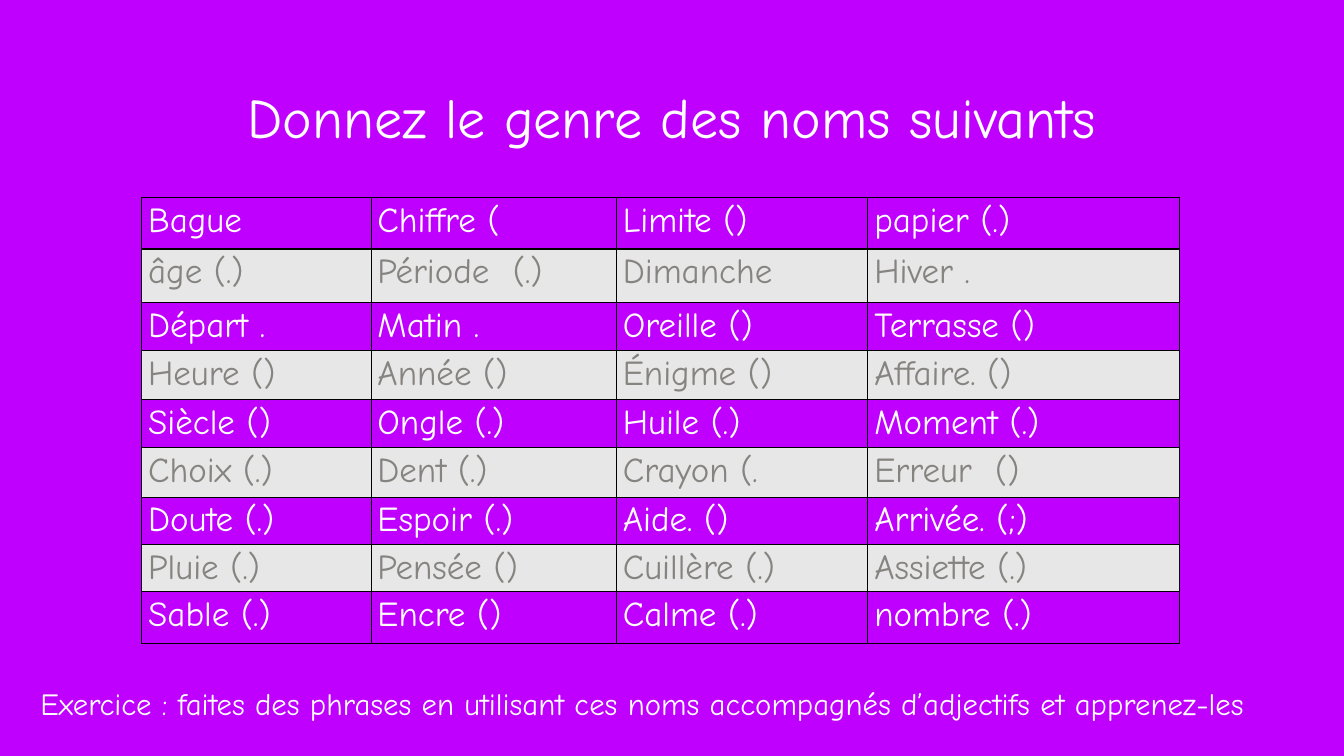
from dataclasses import dataclass

import pptx
import pptx.dml.color
import pptx.enum.text
import pptx.oxml
import pptx.oxml.ns
import pptx.util
from pptx.util import Inches


@dataclass(frozen=True)
class Theme:
    font: str = "Comic Neue"
    background: str = "BF00FF"
    light: str = "FFFFFF"
    muted: str = "868480"
    band: str = "E7E7E7"
    border: str = "000000"
    title_size: int = 80
    noun_size: int = 50
    exercise_size: int = 44


@dataclass(frozen=True)
class Box:
    left: float
    top: float
    width: float
    height: float


@dataclass(frozen=True)
class NounRow:
    height: float
    nouns: tuple[str, ...]


THEME = Theme()
TITLE_BOX = Box(1.94, 0.39, 22.78, 3.82)
TABLE_BOX = Box(2.81, 3.91, 20.6, 8.8)
EXERCISE_BOX = Box(0.74, 13.12, 24.52, 1.66)
COLUMN_WIDTHS = (4.55, 4.87, 4.99, 6.19)
ROWS = (
    NounRow(1.03, ("Bague", "Chiffre (", "Limite ()", "papier (.)")),
    NounRow(1.06, ("âge (.)", "Période  (.)", "Dimanche", "Hiver .")),
    NounRow(0.96, ("Départ .", "Matin .", "Oreille ()", "Terrasse ()")),
    NounRow(0.96, ("Heure ()", "Année ()", "Énigme ()", "Affaire. ()")),
    NounRow(0.96, ("Siècle ()", "Ongle (.)", "Huile (.)", "Moment (.)")),
    NounRow(0.98, ("Choix (.)", "Dent (.)", "Crayon (.", "Erreur  ()")),
    NounRow(0.92, ("Doute (.)", "Espoir (.)", "Aide. ()", "Arrivée. (;)")),
    NounRow(0.89, ("Pluie (.)", "Pensée ()", "Cuillère (.)", "Assiette (.)")),
    NounRow(1.02, ("Sable (.)", "Encre ()", "Calme (.)", "nombre (.)")),
)


def rgb(value: str) -> pptx.dml.color.RGBColor:
    return pptx.dml.color.RGBColor.from_string(value)


def lengths(box: Box) -> tuple[int, ...]:
    return tuple(Inches(v) for v in (box.left, box.top, box.width, box.height))


def set_text(tf, text: str, size: int, color: str) -> None:
    tf.text = text
    for r in tf.paragraphs[0].runs:
        r.font.name = THEME.font
        r.font.size = pptx.util.Pt(size)
        r.font.bold = False
        r.font.color.rgb = rgb(color)


def format_frame(tf) -> None:
    tf.word_wrap = True
    tf.auto_size = pptx.enum.text.MSO_AUTO_SIZE.NONE
    tf.vertical_anchor = pptx.enum.text.MSO_ANCHOR.MIDDLE
    tf.margin_left = tf.margin_right = Inches(0.06)
    tf.margin_top = tf.margin_bottom = Inches(0.06)


def add_title(s, text: str) -> None:
    sp = s.shapes.title
    sp.left, sp.top, sp.width, sp.height = lengths(TITLE_BOX)
    set_text(sp.text_frame, text, THEME.title_size, THEME.light)
    format_frame(sp.text_frame)
    sp.text_frame.paragraphs[0].alignment = pptx.enum.text.PP_ALIGN.CENTER


def add_exercise(s, text: str) -> None:
    tf = s.shapes.add_textbox(*lengths(EXERCISE_BOX)).text_frame
    set_text(tf, text, THEME.exercise_size, THEME.light)
    format_frame(tf)


def set_borders(cell, widths: dict[str, int]) -> None:
    tc_pr = cell._tc.get_or_add_tcPr()
    for side, width in widths.items():
        tc_pr.append(pptx.oxml.parse_xml(
            f'<a:ln{side} {pptx.oxml.ns.nsdecls("a")} w="{pptx.util.Pt(width)}">'
            f'<a:solidFill><a:srgbClr val="{THEME.border}"/></a:solidFill>'
            f'<a:prstDash val="solid"/></a:ln{side}>'
        ))


def format_cell(cell, text: str, row_index: int) -> None:
    banded = row_index % 2 == 1
    cell.margin_left = cell.margin_right = Inches(0.13)
    cell.margin_top = cell.margin_bottom = Inches(0.07)
    set_text(cell.text_frame, text, THEME.noun_size, THEME.muted if banded else THEME.light)
    set_borders(cell, {
        "L": 1,
        "R": 1,
        "T": 2 if row_index == 1 else 1,
        "B": 2 if row_index == 0 else 1,
    })
    if banded:
        cell.fill.solid()
        cell.fill.fore_color.rgb = rgb(THEME.band)
    else:
        cell.fill.background()


def add_noun_table(s, rows: tuple[NounRow, ...]) -> None:
    table = s.shapes.add_table(len(rows), len(COLUMN_WIDTHS), *lengths(TABLE_BOX)).table
    table.first_row = False
    table.horz_banding = False
    for column, width in zip(table.columns, COLUMN_WIDTHS):
        column.width = Inches(width)
    for i, row in enumerate(rows):
        table.rows[i].height = Inches(row.height)
        for j, noun in enumerate(row.nouns):
            format_cell(table.cell(i, j), noun, i)


def main() -> None:
    prs = pptx.Presentation()
    prs.slide_width, prs.slide_height = Inches(26.67), Inches(15)
    s = prs.slides.add_slide(prs.slide_layouts.get_by_name("Title Only"))
    s.background.fill.solid()
    s.background.fill.fore_color.rgb = rgb(THEME.background)
    add_title(s, "Donnez le genre des noms suivants")
    add_noun_table(s, ROWS)
    add_exercise(
        s,
        "Exercice : faites des phrases en utilisant ces noms "
        "accompagnés d’adjectifs et apprenez-les",
    )
    prs.save("out.pptx")


if __name__ == "__main__":
    main()
